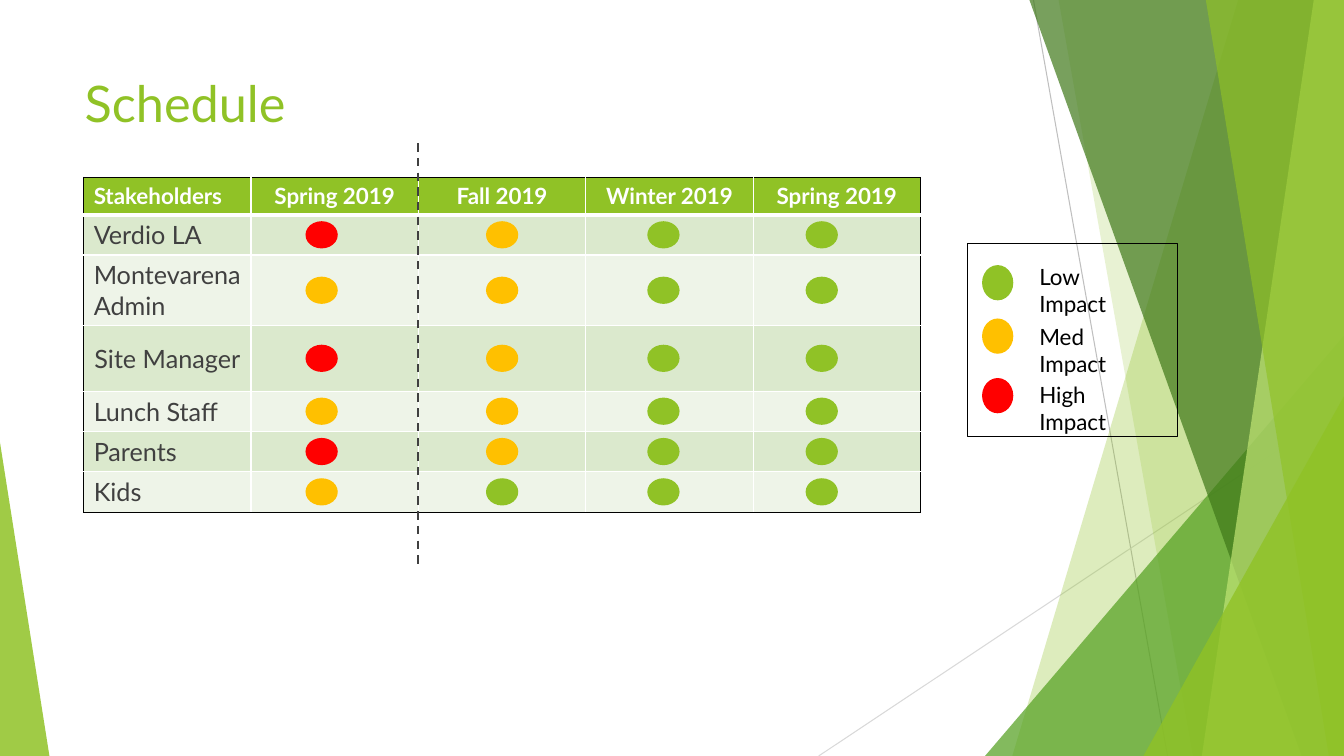
from collections import namedtuple
from itertools import accumulate

from lxml.etree import SubElement
from pptx import Presentation
from pptx.dml.color import RGBColor
from pptx.enum.dml import MSO_LINE_DASH_STYLE as Dash
from pptx.enum.shapes import MSO_CONNECTOR_TYPE as Connector, MSO_SHAPE as Shape
from pptx.enum.text import MSO_ANCHOR as Anchor, PP_ALIGN as Align
from pptx.oxml.ns import qn
from pptx.util import Inches, Pt

FONT = "Lato"
WHITE = RGBColor(0xFF, 0xFF, 0xFF)
BLACK = RGBColor(0, 0, 0)
INK = RGBColor(0x40, 0x40, 0x40)
SILVER = RGBColor(0xBF, 0xBF, 0xBF)
MIST = RGBColor(0xD9, 0xD9, 0xD9)
LIME = RGBColor(0x90, 0xC2, 0x26)
LEAF = RGBColor(0x54, 0xA0, 0x21)
FOREST = RGBColor(0x3F, 0x78, 0x19)
PALE_LIME = RGBColor(0xC0, 0xE4, 0x74)
BAND_DARK = RGBColor(0xDB, 0xE9, 0xCD)
BAND_LIGHT = RGBColor(0xEE, 0xF4, 0xE8)
AMBER = RGBColor(0xFF, 0xC0, 0x00)
RED = RGBColor(0xFF, 0, 0)

IMPACT = {"L": LIME, "M": AMBER, "H": RED}
HEADINGS = ["Stakeholders", "Spring 2019", "Fall 2019", "Winter 2019", "Spring 2019"]
STAKEHOLDERS = [
    ("Verdio LA", "HMLL"),
    ("Montevarena\nAdmin", "MMLL"),
    ("Site Manager", "HMLL"),
    ("Lunch Staff", "MMLL"),
    ("Parents", "HMLL"),
    ("Kids", "MLLL"),
]
ROW_HEIGHTS = [0.37, 0.4, 0.7, 0.65, 0.4, 0.4, 0.4]
DOT_CENTERS = [2.36, 4.15, 5.75, 7.32]

Box = namedtuple("Box", "left top width height")
SLIDE = Box(0, 0, 13.33, 7.5)
TITLE = Box(0.74, 0.67, 9.4, 1.44)
SCHEDULE = Box(0.83, 1.76, 8.3, sum(ROW_HEIGHTS))
LEGEND = Box(9.6, 2.42, 2.08, 1.91)


def emu(box):
    return [Inches(value) for value in box]


def style_text(frame, size, color, bold=False, align=None):
    for para in frame.paragraphs:
        para.alignment = align
        for span in para.runs:
            span.font.name = FONT
            span.font.size = Pt(size)
            span.font.bold = bold
            span.font.color.rgb = color


def paint(shape, color, opacity=100):
    shape.shadow.inherit = False
    shape.line.fill.background()
    shape.fill.solid()
    shape.fill.fore_color.rgb = color
    if opacity < 100:
        tint = shape.fill._xPr.find(qn("a:solidFill"))[0]
        SubElement(tint, qn("a:alpha"), val=str(opacity * 1000))


def add_line(page, start, end, color, width, dash=None):
    line = page.shapes.add_connector(Connector.STRAIGHT, *emu(start + end))
    line.line.color.rgb = color
    line.line.width = Pt(width)
    if dash:
        line.line.dash_style = dash
    SubElement(line._element.spPr, qn("a:effectLst"))


def add_dot(page, box, color):
    paint(page.shapes.add_shape(Shape.OVAL, *emu(box)), color)


def add_shard(page, box, top_left, bottom_left, color, opacity):
    right, bottom = box.left + box.width, box.top + box.height
    builder = page.shapes.build_freeform(Inches(top_left), Inches(box.top))
    corners = [(right, box.top), (right, bottom), (bottom_left, bottom)]
    builder.add_line_segments([(Inches(x), Inches(y)) for x, y in corners])
    paint(builder.convert_to_shape(), color, opacity)


def add_corner(page, box, width, height, at_right, color, opacity):
    left = box.left + (box.width - width if at_right else 0)
    top = box.top + box.height - height
    corner = page.shapes.add_shape(Shape.ISOSCELES_TRIANGLE, *emu((left, top, width, height)))
    corner.adjustments[0] = 1 if at_right else 0
    paint(corner, color, opacity)


def add_backdrop(page, box):
    right, bottom = box.left + box.width, box.top + box.height
    add_line(page, (10.25, box.top), (11.58, bottom), SILVER, 0.75)
    add_line(page, (right, 4.03), (8.12, bottom), MIST, 0.75)
    add_shard(page, box, 12.28, 10.04, LIME, 30)
    add_shard(page, box, 10.5, 11.83, LIME, 20)
    add_corner(page, box, 3.56, 4.17, True, LEAF, 72)
    add_shard(page, box, 10.21, 12.91, FOREST, 70)
    add_shard(page, box, 13.03, 11.92, PALE_LIME, 70)
    add_shard(page, box, 11.96, 13.18, LIME, 65)
    add_corner(page, box, 1.99, 3.57, True, LIME, 80)
    add_corner(page, box, 0.49, 3.11, False, LIME, 85)


def add_title(page, box):
    title = page.shapes.title
    title.left, title.top, title.width, title.height = emu(box)
    frame = title.text_frame
    frame.text = "Schedule"
    frame.vertical_anchor = Anchor.TOP
    style_text(frame, 36, LIME, align=Align.LEFT)


def set_borders(cell, row, col, last_row, last_col):
    sides = [
        ("L", col == 0, 1),
        ("R", col == last_col, 1),
        ("T", row == 0, 3 if row == 1 else 1),
        ("B", row == last_row, 3 if row == 0 else 1),
    ]
    for side, outer, width in sides:
        border = SubElement(cell._tc.get_or_add_tcPr(), qn(f"a:ln{side}"), w=str(Pt(width)))
        fill = SubElement(border, qn("a:solidFill"))
        SubElement(fill, qn("a:srgbClr"), val=str(BLACK if outer else WHITE))


def fill_cell(cell, row, col, text):
    header = row == 0
    cell.fill.solid()
    cell.fill.fore_color.rgb = LIME if header else BAND_DARK if row % 2 else BAND_LIGHT
    if not text:
        cell.margin_top = cell.margin_bottom = 0
        return
    cell.text_frame.text = text
    centered = text == "Site Manager" or header and col > 0
    if text == "Site Manager":
        cell.vertical_anchor = Anchor.MIDDLE
    style_text(cell.text_frame, 16 if header else 18, WHITE if header else INK,
               header, Align.CENTER if centered else Align.LEFT)


def add_schedule(page, box):
    rows = [HEADINGS] + [[name, "", "", "", ""] for name, _ in STAKEHOLDERS]
    table = page.shapes.add_table(len(rows), len(HEADINGS), *emu(box)).table
    for column in table.columns:
        column.width = Inches(box.width / len(HEADINGS))
    for row, (height, texts) in enumerate(zip(ROW_HEIGHTS, rows)):
        table.rows[row].height = Inches(height)
        for col, text in enumerate(texts):
            cell = table.cell(row, col)
            set_borders(cell, row, col, len(rows) - 1, len(HEADINGS) - 1)
            fill_cell(cell, row, col, text)

    width, height = 0.32, 0.27
    row_tops = accumulate(ROW_HEIGHTS[:-1])
    for row_top, row_height, (_, levels) in zip(row_tops, ROW_HEIGHTS[1:], STAKEHOLDERS):
        top = box.top + row_top + (row_height - height) / 2
        for center, level in zip(DOT_CENTERS, levels):
            add_dot(page, (box.left + center - width / 2, top, width, height), IMPACT[level])

    divider = box.left + box.width * 2 / len(HEADINGS)
    add_line(page, (divider, box.top - 0.34), (divider, box.top + box.height + 0.55),
             INK, 1.5, Dash.DASH)


def add_legend(page, box):
    entries = [("Low Impact", LIME, 0.21, 0.14), ("Med Impact", AMBER, 0.74, 0.74),
               ("High Impact", RED, 1.33, 1.31)]
    for _, color, dot_top, _ in entries:
        add_dot(page, (box.left + 0.14, box.top + dot_top, 0.31, 0.35), color)
    outline = page.shapes.add_shape(Shape.RECTANGLE, *emu(box))
    outline.shadow.inherit = False
    outline.fill.background()
    outline.line.color.rgb = BLACK
    outline.line.width = Pt(0.75)
    for label, _, _, text_top in entries:
        area = (box.left + 0.61, box.top + text_top, 1.21, 0.64)
        frame = page.shapes.add_textbox(*emu(area)).text_frame
        frame.word_wrap = True
        frame.text = label
        style_text(frame, 16, BLACK)


def main():
    deck = Presentation()
    deck.slide_width, deck.slide_height = Inches(SLIDE.width), Inches(SLIDE.height)
    page = deck.slides.add_slide(deck.slide_layouts[5])
    add_backdrop(page, SLIDE)
    add_title(page, TITLE)
    add_schedule(page, SCHEDULE)
    add_legend(page, LEGEND)
    deck.save("out.pptx")


if __name__ == "__main__":
    main()
